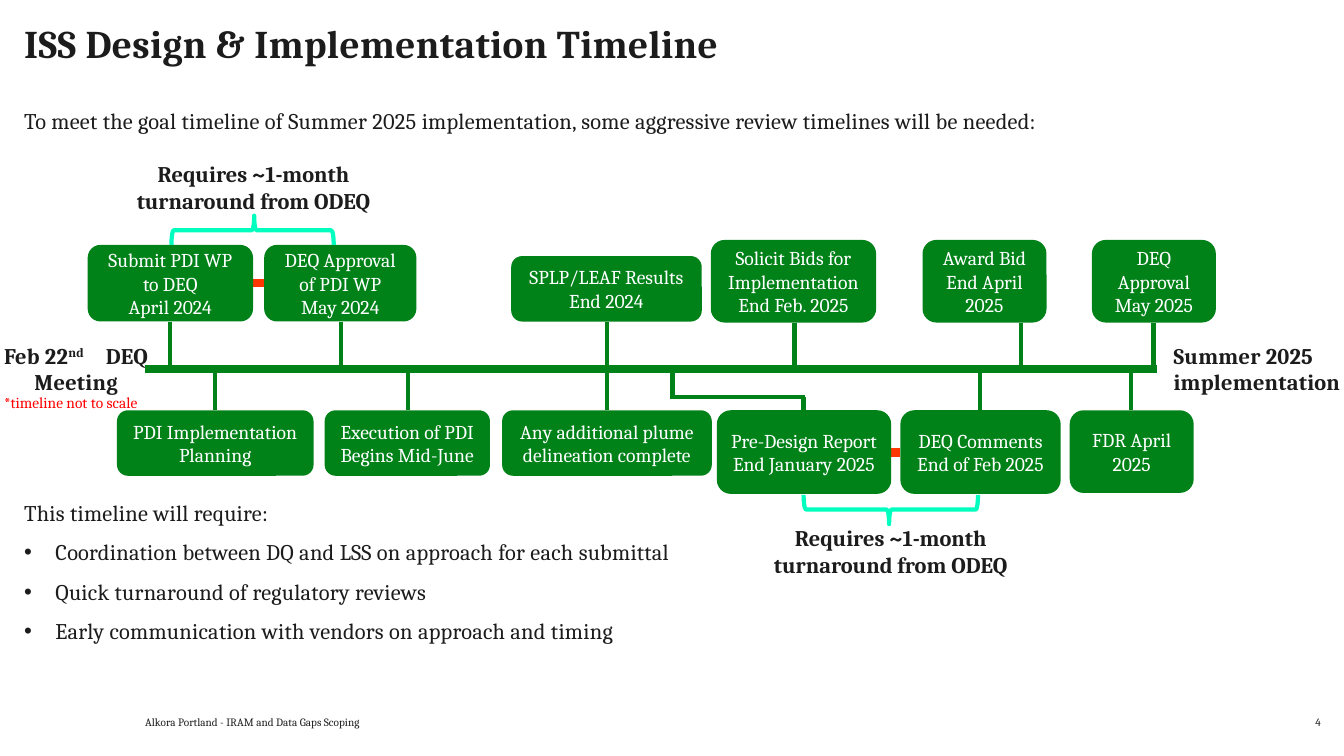
from pptx import Presentation, util as u
from pptx.dml.color import RGBColor
from pptx.enum import shapes, text
from pptx.oxml.ns import qn
from lxml import etree

PX = 9144  # 100 px to the inch
HUE = {"ink": "1C1C1C", "green": "018219", "mint": "00FFBE",
       "orange": "FF3600", "red": "FF0000", "white": "FFFFFF"}
ALIGN = text.PP_ALIGN
ANCHOR = text.MSO_ANCHOR


def px(*nums):
    return [u.Emu(n * PX) for n in nums]


def write(shape, lines, size=16, hue="ink", bold=False, align=ALIGN.LEFT,
          anchor=ANCHOR.TOP, inset=(0, 0), gap=0, track=0, bullets=False):
    """Fill a shape with paragraphs; a line is a string or a list of (string, run attributes)."""
    frame = shape.text_frame
    frame.word_wrap = True
    frame.auto_size = text.MSO_AUTO_SIZE.NONE
    frame.vertical_anchor = anchor
    frame.margin_left = frame.margin_right = u.Emu(inset[0] * PX)
    frame.margin_top = frame.margin_bottom = u.Emu(inset[1] * PX)
    for i, line in enumerate(lines):
        para = frame.paragraphs[0] if i == 0 else frame.add_paragraph()
        para.alignment = align
        para.space_before = u.Pt(gap if i else 0)
        if bullets and i:
            props = para._p.get_or_add_pPr()
            props.set("marL", str(31 * PX))
            props.set("indent", str(-31 * PX))
            etree.SubElement(props, qn("a:buFont")).set("typeface", "Arial")
            etree.SubElement(props, qn("a:buChar")).set("char", "•")
        for words, attrs in [(line, {})] if isinstance(line, str) else line:
            run = para.add_run()
            run.text = words
            font = run.font
            font.name, font.size, font.bold = "Cambria", u.Pt(size), bold
            font.color.rgb = RGBColor.from_string(HUE[hue])
            for key, val in {"spc": track, **attrs}.items():
                run._r.get_or_add_rPr().set(key, str(val))


deck = Presentation()
deck.slide_width, deck.slide_height = px(1333, 750)
slide = deck.slides.add_slide(deck.slide_layouts[5])
items = slide.shapes

# Title
title = items.title
title.left, title.top, title.width, title.height = px(24, 24, 1286, 79)
write(title, ["ISS Design & Implementation Timeline"], size=28, bold=True, track=30)
title.text_frame.paragraphs[0].line_spacing = 0.9

# Plain text
MID = {"bold": True, "align": ALIGN.CENTER}
FOOT = {"size": 8, "anchor": ANCHOR.BOTTOM}
review = ["Requires ~1-month turnaround from ODEQ"]
start = [("Feb 22", {}), ("nd", {"baseline": 30000}), (" ", {"spc": 1200}), ("DEQ Meeting", {})]
labels = [
    ((24, 106, 1286, 27), ["To meet the goal timeline of Summer 2025 implementation, "
                           "some aggressive review timelines will be needed:"], {"track": 20}),
    ((24, 495, 643, 182), ["This timeline will require:",
                           "Coordination between DQ and LSS on approach for each submittal",
                           "Quick turnaround of regulatory reviews",
                           "Early communication with vendors on approach and timing"],
     {"track": 20, "gap": 9, "bullets": True}),
    ((1164, 339, 169, 54), ["Summer 2025 implementation"], {"bold": True, "track": 20}),
    ((0, 339, 151, 54), [start], {"track": 20, **MID}),
    ((130, 159, 243, 54), review, MID),
    ((762, 520, 243, 54), review, MID),
    ((4, 390, 156, 19), ["*timeline not to scale"], {"size": 11, "hue": "red"}),
    ((144, 703, 512, 20), ["Alkora Portland - IRAM and Data Gaps Scoping"], FOOT),
    ((1251, 703, 59, 20), ["4"], {"align": ALIGN.RIGHT, **FOOT}),
]
for box, lines, look in labels:
    write(items.add_textbox(*px(*box)), lines, **look)

# Axis, stems and links between paired cards
AXIS = 366
stems = [(x, AXIS, x, end) for x, end in [
    (169, 319), (338, 319), (602, 319), (788, 320), (1013, 320), (1144, 320),
    (213, 407), (405, 407), (602, 407), (972, 407), (1122, 407)]]
elbow = [(667, AXIS, 667, 396), (666, 394, 798, 394), (797, 394, 797, 407)]
strokes = [((144, AXIS, 1148, AXIS), "green", 6)]
strokes += [(ends, "green", 3) for ends in stems + elbow]
strokes += [((251, 281, 262, 281), "orange", 6), ((884, 449, 893, 449), "orange", 6)]
for ends, hue, width in strokes:
    line = items.add_connector(shapes.MSO_CONNECTOR.STRAIGHT, *px(*ends))
    line.line.color.rgb = RGBColor.from_string(HUE[hue])
    line.line.width = u.Pt(width)
    etree.SubElement(line._element.spPr, qn("a:effectLst"))

# Milestone cards
cards = [
    ((87, 243, 164, 76), ["Submit PDI WP to DEQ", "April 2024"]),
    ((262, 243, 151, 76), ["DEQ Approval of PDI WP", "May 2024"]),
    ((507, 254, 189, 65), ["SPLP/LEAF Results", "End 2024"]),
    ((705, 238, 164, 82), ["Solicit Bids for Implementation", "End Feb. 2025"]),
    ((915, 238, 123, 82), ["Award Bid", "End April 2025"]),
    ((1083, 238, 123, 82), ["DEQ Approval May 2025"]),
    ((116, 407, 195, 65), ["PDI Implementation Planning"]),
    ((322, 407, 164, 65), ["Execution of PDI Begins Mid-June"]),
    ((498, 407, 208, 65), ["Any additional plume delineation complete"]),
    ((711, 407, 173, 83), ["Pre-Design Report End January 2025"]),
    ((893, 407, 159, 83), ["DEQ Comments End of Feb 2025"]),
    ((1061, 407, 123, 82), ["FDR April 2025"]),
]
for box, lines in cards:
    card = items.add_shape(shapes.MSO_SHAPE.ROUNDED_RECTANGLE, *px(*box))
    card.shadow.inherit = False
    card.fill.solid()
    card.fill.fore_color.rgb = RGBColor.from_string(HUE["green"])
    card.line.fill.background()
    write(card, lines, size=14, hue="white", align=ALIGN.CENTER,
          anchor=ANCHOR.MIDDLE, inset=(10, 5))

# Braces around the review periods
for box, turn in [((236, 148, 29, 161), 270), ((869, 419, 29, 173), 90)]:
    brace = items.add_shape(shapes.MSO_SHAPE.RIGHT_BRACE, *px(*box))
    brace.rotation = turn
    brace.adjustments[0], brace.adjustments[1] = 0.08, 0.51
    brace.shadow.inherit = False
    brace.fill.background()
    brace.line.color.rgb = RGBColor.from_string(HUE["mint"])
    brace.line.width = u.Pt(3)

deck.save("out.pptx")
